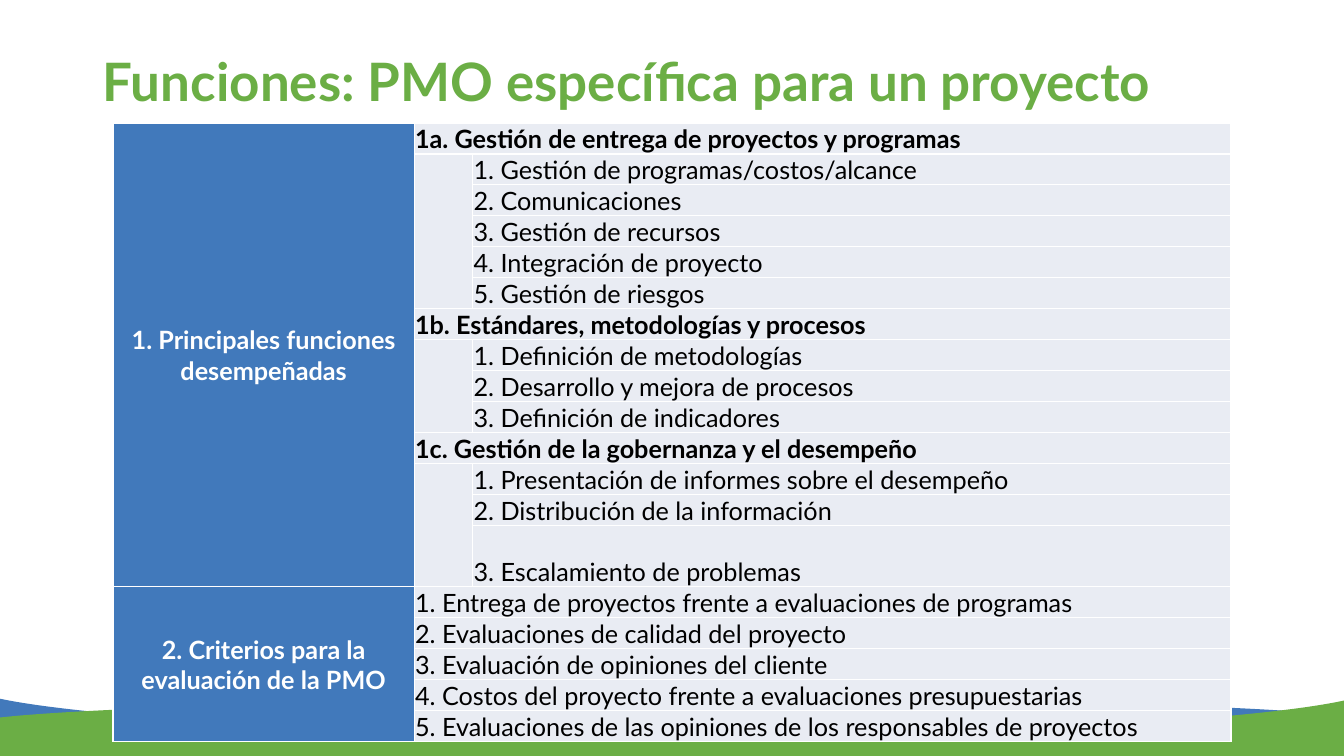
from lxml.etree import SubElement
from pptx import Presentation
from pptx.dml.color import RGBColor
from pptx.enum.text import MSO_ANCHOR as Anchor, PP_ALIGN as Align
from pptx.oxml import parse_xml
from pptx.oxml.ns import nsdecls, qn
from pptx.util import Inches, Pt

BLUE = RGBColor(0x42, 0x79, 0xBB)
NAVY = RGBColor(0x41, 0x79, 0xBB)
GREEN = RGBColor(0x6B, 0xAE, 0x45)
PALE = RGBColor(0xE9, 0xEC, 0xF3)
WHITE = RGBColor(0xFF, 0xFF, 0xFF)
BLACK = RGBColor(0, 0, 0)
FONT = "Lato"

TITLE = "Funciones: PMO específica para un proyecto"
ROLES = "1. Principales funciones desempeñadas"
GROUPS = [
    ("1a. Gestión de entrega de proyectos y programas", [
        "1. Gestión de programas/costos/alcance",
        "2. Comunicaciones",
        "3. Gestión de recursos",
        "4. Integración de proyecto",
        "5. Gestión de riesgos"]),
    ("1b. Estándares, metodologías y procesos", [
        "1. Definición de metodologías",
        "2. Desarrollo y mejora de procesos",
        "3. Definición de indicadores"]),
    ("1c. Gestión de la gobernanza y el desempeño", [
        "1. Presentación de informes sobre el desempeño",
        "2. Distribución de la información",
        "3. Escalamiento de problemas"]),
]
RATING = "2. Criterios para la evaluación de la PMO"
CRITERIA = [
    "1. Entrega de proyectos frente a evaluaciones de programas",
    "2. Evaluaciones de calidad del proyecto",
    "3. Evaluación de opiniones del cliente",
    "4. Costos del proyecto frente a evaluaciones presupuestarias",
    "5. Evaluaciones de las opiniones de los responsables de proyectos",
]
COLS = [2.99, 0.58, 7.52]
ROW_H, TALL_H = 0.3, 0.61

# Each wave: colour, start, Bezier pieces of three points, bottom edge
WAVES = [
    (BLUE, (13.33, 7.1),
     [(12.56, 7.01), (10.26, 6.94), (8.7, 6.96),
      (7.15, 6.98), (5.43, 7.22), (3.98, 7.22),
      (2.53, 7.21), (0.68, 7.08), (-0.01, 6.93)],
     [(-0.01, 7.49), (13.33, 7.5)]),
    (GREEN, (-0.01, 7.12),
     [(0.76, 7.03), (3.06, 6.96), (4.62, 6.98),
      (6.18, 7), (7.89, 7.24), (9.35, 7.24),
      (10.8, 7.23), (12.65, 7.1), (13.33, 6.95)],
     [(13.34, 7.5), (0, 7.52)]),
]

prs = Presentation()
prs.slide_width, prs.slide_height = Inches(13.33), Inches(7.5)
slide = prs.slides.add_slide(prs.slide_layouts[5])


def bend(shape, count):
    """Turn the first count line segments into cubic curves."""
    lines = list(shape._element.iter(qn("a:lnTo")))[:count]
    for i in range(0, count, 3):
        trio = lines[i:i + 3]
        outline = trio[0].getparent()
        curve = SubElement(outline, qn("a:cubicBezTo"))
        trio[0].addprevious(curve)
        for line in trio:
            curve.append(line[0])
            outline.remove(line)


def style(par, size, color, bold):
    for run in par.runs:
        font = run.font
        font.name, font.size, font.bold = FONT, Pt(size), bold
        font.color.rgb = color


# Waves at the foot
for color, start, curve, base in WAVES:
    form = slide.shapes.build_freeform(*map(Inches, start))
    form.add_line_segments(
        [(Inches(x), Inches(y)) for x, y in curve + base], close=True)
    wave = form.convert_to_shape()
    bend(wave, len(curve))
    wave.shadow.inherit = False
    wave.fill.solid()
    wave.fill.fore_color.rgb = color
    wave.line.fill.background()

# Title
title = slide.shapes.title
title.left, title.top = Inches(0.92), Inches(0.29)
title.width, title.height = Inches(11.5), Inches(1.09)
title.text_frame.text = TITLE
title.text_frame.vertical_anchor = Anchor.MIDDLE
head = title.text_frame.paragraphs[0]
head.alignment, head.line_spacing = Align.LEFT, 0.9
style(head, 37.8, GREEN, True)

# Table frame
split = sum(1 + len(items) for _, items in GROUPS)
count = split + len(CRITERIA)
heights = [ROW_H] * count
heights[split - 1] = TALL_H
table = slide.shapes.add_table(
    count, len(COLS), Inches(1.12), Inches(1.22),
    Inches(sum(COLS)), Inches(sum(heights))).table
table.first_row = table.horz_banding = False
for col, width in zip(table.columns, COLS):
    col.width = Inches(width)
for row, height in zip(table.rows, heights):
    row.height = Inches(height)

# Cell look: margins, fill, white borders
for row in table.rows:
    for c, cell in enumerate(row.cells):
        cell.margin_left = cell.margin_right = cell.margin_top = Pt(0.5)
        cell.margin_bottom = 0
        cell.vertical_anchor = Anchor.BOTTOM if c else Anchor.MIDDLE
        cell.fill.solid()
        cell.fill.fore_color.rgb = PALE if c else NAVY
        props = cell._tc.get_or_add_tcPr()
        for i, side in enumerate("LRTB"):
            props.insert(i, parse_xml(
                f'<a:ln{side} {nsdecls("a")} w="12700"><a:solidFill>'
                f'<a:srgbClr val="{WHITE}"/></a:solidFill></a:ln{side}>'))


def put(row, col, text, bold=False, down=1, over=1):
    """Write a cell, spanning rows down and columns over."""
    cell = table.cell(row, col)
    if down > 1 or over > 1:
        cell.merge(table.cell(row + down - 1, col + over - 1))
    cell.text_frame.text = text
    par = cell.text_frame.paragraphs[0]
    par.alignment = Align.LEFT if col else Align.CENTER
    style(par, 18, BLACK if col else WHITE, bold)


# Table content
put(0, 0, ROLES, True, down=split)
put(split, 0, RATING, True, down=len(CRITERIA))
r = 0
for name, items in GROUPS:
    put(r, 1, name, True, over=2)
    put(r + 1, 1, "", down=len(items))
    for i, item in enumerate(items, r + 1):
        put(i, 2, item)
    r += 1 + len(items)
for i, item in enumerate(CRITERIA, split):
    put(i, 1, item, over=2)

prs.save("out.pptx")
